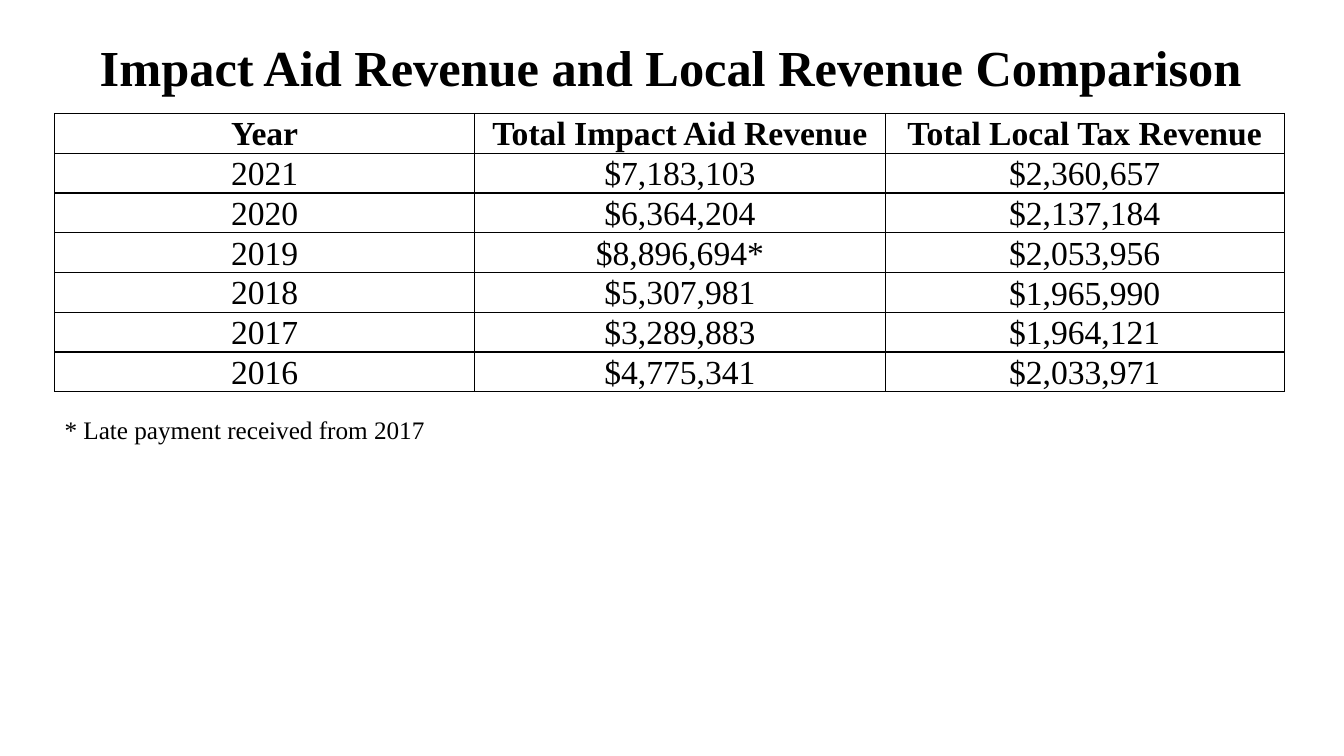
from dataclasses import dataclass

from lxml.etree import SubElement
from pptx import Presentation
from pptx.dml.color import RGBColor
from pptx.enum.text import MSO_ANCHOR as Anchor, MSO_AUTO_SIZE as AutoSize, PP_ALIGN as Align
from pptx.oxml.ns import qn
from pptx.util import Emu, Pt

FONT = "Times New Roman"
BLACK = "000000"
WHITE = "FFFFFF"
ROW_HEIGHT = 28
COLUMN_WIDTHS = (400, 391, 380)
HEADINGS = ("Year", "Total Impact Aid Revenue", "Total Local Tax Revenue")


@dataclass(frozen=True)
class YearRevenue:
    year: str
    impact_aid: str
    local_tax: str


REVENUES = (
    YearRevenue("2021", "$7,183,103", "$2,360,657"),
    YearRevenue("2020", "$6,364,204", "$2,137,184"),
    YearRevenue("2019", "$8,896,694*", "$2,053,956"),
    YearRevenue("2018", "$5,307,981", "$1,965,990"),
    YearRevenue("2017", "$3,289,883", "$1,964,121"),
    YearRevenue("2016", "$4,775,341", "$2,033,971"),
)


def px(length: int) -> Emu:
    return Emu(length * 9525)


def colour(value: str) -> RGBColor:
    return RGBColor.from_string(value)


def write(frame, text: str, size: int, bold: bool, align: Align) -> None:
    frame.text = text
    paragraph = frame.paragraphs[0]
    paragraph.alignment = align
    paragraph.font.name = FONT
    paragraph.font.size = Pt(size)
    paragraph.font.bold = bold
    paragraph.font.color.rgb = colour(BLACK)


def add_borders(cell) -> None:
    properties = cell._tc.get_or_add_tcPr()
    for side in ("a:lnL", "a:lnR", "a:lnT", "a:lnB"):
        border = SubElement(properties, qn(side), w=str(Pt(1)))
        fill = SubElement(border, qn("a:solidFill"))
        SubElement(fill, qn("a:srgbClr"), val=BLACK)


def fill_cell(cell, text: str, bold: bool, anchor: Anchor) -> None:
    write(cell.text_frame, text, 24, bold, Align.CENTER)
    cell.text_frame.paragraphs[0].line_spacing = 1.07
    cell.margin_left = cell.margin_right = px(7)
    cell.margin_top = cell.margin_bottom = 0
    cell.vertical_anchor = anchor
    add_borders(cell)
    cell.fill.solid()
    cell.fill.fore_color.rgb = colour(WHITE)


def add_title(slide) -> None:
    title = slide.shapes.title
    title.left, title.top, title.width, title.height = map(px, (36, 29, 1206, 68))
    frame = title.text_frame
    frame.word_wrap = True
    frame.auto_size = AutoSize.NONE
    frame.vertical_anchor = Anchor.MIDDLE
    write(frame, "Impact Aid Revenue and Local Revenue Comparison", 36, True, Align.CENTER)


def add_revenue_table(slide) -> None:
    rows = [HEADINGS] + [(r.year, r.impact_aid, r.local_tax) for r in REVENUES]
    bounds = map(px, (52, 108, sum(COLUMN_WIDTHS), ROW_HEIGHT * len(rows)))
    table = slide.shapes.add_table(len(rows), len(HEADINGS), *bounds).table
    table.horz_banding = False
    for column, width in zip(table.columns, COLUMN_WIDTHS):
        column.width = px(width)
    for row_index, row in enumerate(rows):
        table.rows[row_index].height = px(ROW_HEIGHT)
        is_heading = row_index == 0
        for column_index, text in enumerate(row):
            is_local_tax = column_index == 2 and not is_heading
            anchor = Anchor.BOTTOM if is_local_tax else Anchor.TOP
            fill_cell(table.cell(row_index, column_index), text, is_heading, anchor)


def add_footnote(slide) -> None:
    footnote = slide.shapes.add_textbox(*map(px, (52, 390, 640, 38)))
    frame = footnote.text_frame
    frame.word_wrap = True
    frame.auto_size = AutoSize.SHAPE_TO_FIT_TEXT
    write(frame, "* Late payment received from 2017", 18, False, Align.LEFT)


def main() -> None:
    presentation = Presentation()
    presentation.slide_width = px(1280)
    presentation.slide_height = px(720)
    slide = presentation.slides.add_slide(presentation.slide_layouts[5])
    add_title(slide)
    add_revenue_table(slide)
    add_footnote(slide)
    presentation.save("out.pptx")


if __name__ == "__main__":
    main()
